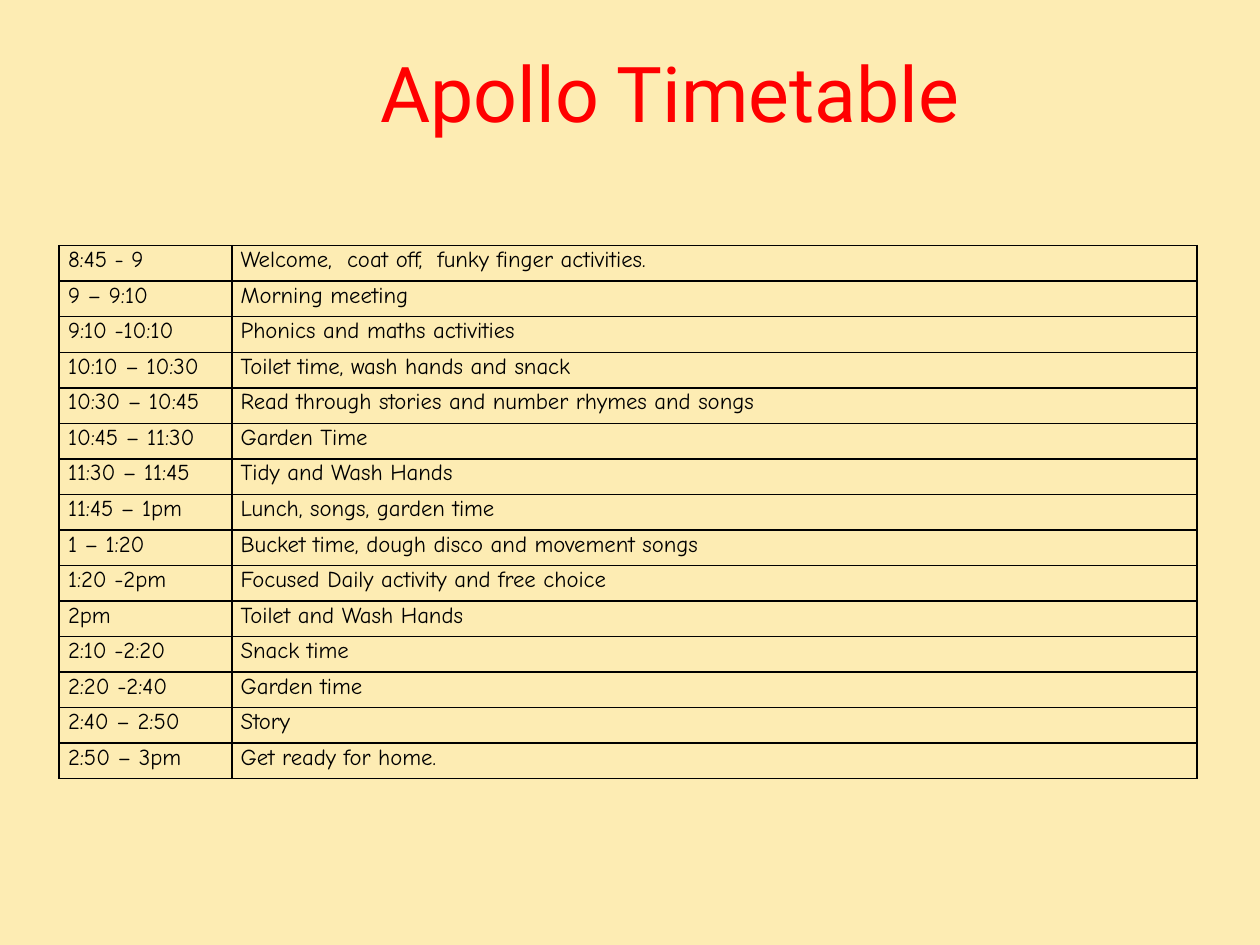
from dataclasses import dataclass

from lxml import etree
from pptx import Presentation
from pptx.dml.color import RGBColor
from pptx.enum.text import MSO_ANCHOR, PP_ALIGN
from pptx.oxml.ns import qn
from pptx.util import Inches, Pt

CENTER = PP_ALIGN.CENTER
MIDDLE = MSO_ANCHOR.MIDDLE
BLANK_LAYOUT = 6


@dataclass(frozen=True)
class Theme:
    background: str = "FDECB3"
    title_color: str = "FF0000"
    ink: str = "000000"
    title_font: str = "Roboto"
    body_font: str = "Comic Neue"
    title_size: int = 44
    body_size: int = 13
    line_spacing: float = 1.07
    border_width: int = 1


THEME = Theme()
WIDTH, HEIGHT = Inches(10), Inches(7.5)
TABLE_LEFT, TABLE_TOP = Inches(0.47), Inches(1.95)
COLUMN_WIDTHS = Inches(1.37), Inches(7.66)
TABLE_HEIGHT = Inches(4.23)
CELL_MARGIN = Inches(0.07)

TIMETABLE = [
    ("8:45 - 9", "Welcome,  coat off,  funky finger activities."),
    ("9 – 9:10", "Morning meeting"),
    ("9:10 -10:10", "Phonics and maths activities"),
    ("10:10 – 10:30", "Toilet time, wash hands and snack"),
    ("10:30 – 10:45", "Read through stories and number rhymes and songs"),
    ("10:45 – 11:30", "Garden Time"),
    ("11:30 – 11:45", "Tidy and Wash Hands"),
    ("11:45 – 1pm", "Lunch, songs, garden time"),
    ("1 – 1:20", "Bucket time, dough disco and movement songs"),
    ("1:20 -2pm", "Focused Daily activity and free choice"),
    ("2pm", "Toilet and Wash Hands"),
    ("2:10 -2:20", "Snack time"),
    ("2:20 -2:40", "Garden time"),
    ("2:40 – 2:50", "Story"),
    ("2:50 – 3pm", "Get ready for home."),
]


def style_font(font, name, size, color):
    font.name = name
    font.size = Pt(size)
    font.color.rgb = RGBColor.from_string(color)


def add_title(slide, wording):
    title = slide.shapes.add_textbox(Inches(1.06), Inches(0.36), Inches(8.52), Inches(0.73))
    frame = title.text_frame
    frame.word_wrap = True
    frame.vertical_anchor = MIDDLE
    heading = frame.paragraphs[0]
    heading.text = wording
    heading.alignment = CENTER
    style_font(heading.font, THEME.title_font, THEME.title_size, THEME.title_color)


def add_borders(cell):
    properties = cell._tc.get_or_add_tcPr()
    for side in ("a:lnL", "a:lnR", "a:lnT", "a:lnB"):
        border = etree.SubElement(properties, qn(side), w=str(Pt(THEME.border_width)))
        fill = etree.SubElement(border, qn("a:solidFill"))
        etree.SubElement(fill, qn("a:srgbClr"), val=THEME.ink)


def fill_cell(cell, wording):
    cell.margin_left = cell.margin_right = CELL_MARGIN
    cell.margin_top = cell.margin_bottom = 0
    entry = cell.text_frame.paragraphs[0]
    entry.text = wording
    entry.line_spacing = THEME.line_spacing
    style_font(entry.font, THEME.body_font, THEME.body_size, THEME.ink)
    add_borders(cell)
    cell.fill.background()


def add_timetable(slide, sessions):
    timetable = slide.shapes.add_table(
        len(sessions), len(COLUMN_WIDTHS), TABLE_LEFT, TABLE_TOP, sum(COLUMN_WIDTHS), TABLE_HEIGHT
    ).table
    timetable.first_row = False
    timetable.horz_banding = False
    for column, width in zip(timetable.columns, COLUMN_WIDTHS):
        column.width = width
    for row, session in zip(timetable.rows, sessions):
        for cell, wording in zip(row.cells, session):
            fill_cell(cell, wording)


def main():
    deck = Presentation()
    deck.slide_width, deck.slide_height = WIDTH, HEIGHT
    slide = deck.slides.add_slide(deck.slide_layouts[BLANK_LAYOUT])
    backdrop = slide.background.fill
    backdrop.solid()
    backdrop.fore_color.rgb = RGBColor.from_string(THEME.background)
    add_title(slide, "Apollo Timetable")
    add_timetable(slide, TIMETABLE)
    deck.save("out.pptx")


if __name__ == "__main__":
    main()
